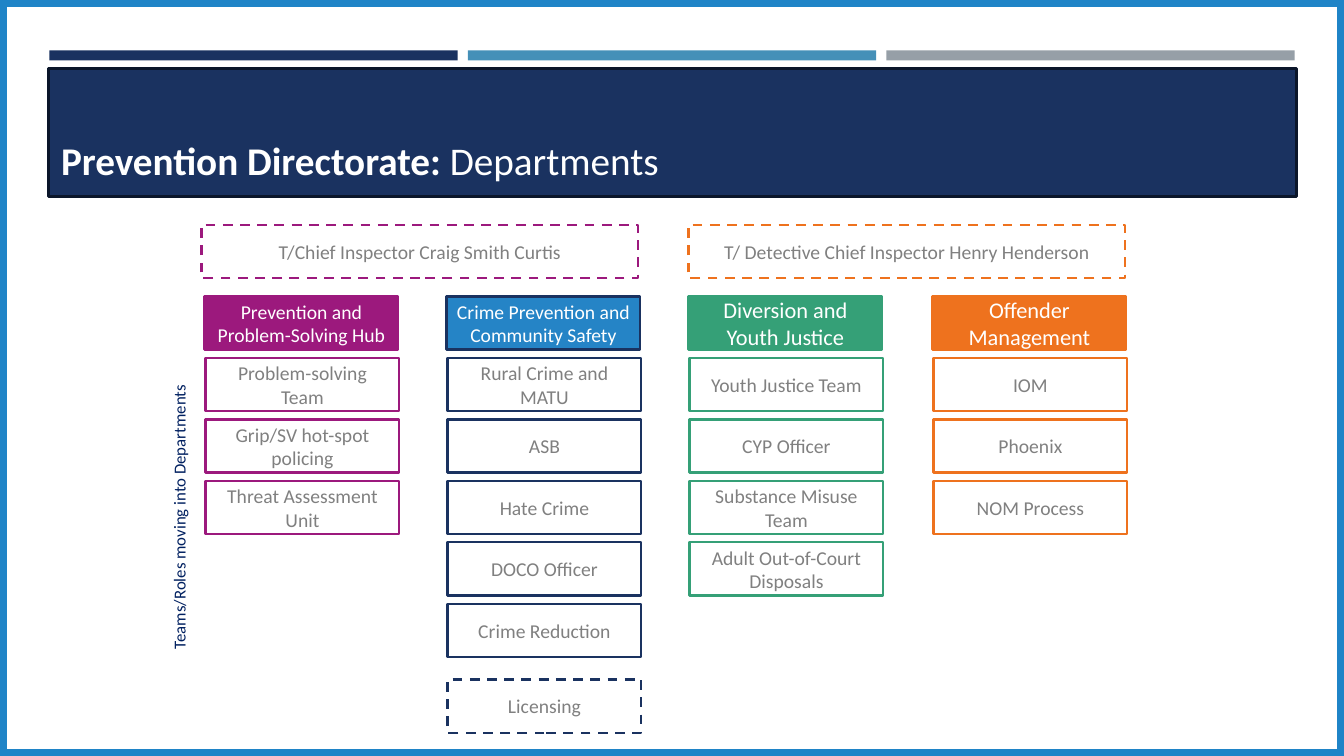
from dataclasses import dataclass

from pptx import Presentation
from pptx.dml.color import RGBColor
from pptx.enum.dml import MSO_LINE
from pptx.enum.shapes import MSO_SHAPE
from pptx.enum.text import MSO_ANCHOR, MSO_AUTO_SIZE, PP_ALIGN
from pptx.shapes.autoshape import Shape
from pptx.slide import Slide
from pptx.text.text import _Paragraph
from pptx.util import Emu, Pt

EMU_PER_PX = 9144
SLIDE_WIDTH, SLIDE_HEIGHT = 1333, 750
FONT = "Calibri"
COLOURS = {
    "white": "FFFFFF",
    "navy": "1A3260",
    "dark navy": "0B162A",
    "label navy": "002060",
    "steel": "4590B8",
    "silver": "969FA7",
    "grey": "808080",
    "purple": "9C197D",
    "blue": "2584C6",
    "green": "35A077",
    "orange": "EE721E",
    "frame blue": "1F84C7",
}

BOX_WIDTH, BOX_HEIGHT = 192, 53
LEADER_TOP, LEADER_WIDTH = 223, 433
HEADING_TOP, ROW_PITCH = 294, 61
TEAM_INDENT = 1
LICENSING_TOP = 674
BAR_LEFT, BAR_TOP, BAR_WIDTH, BAR_HEIGHT, BAR_PITCH = 49, 50, 405, 10, 415


@dataclass(frozen=True)
class Area:
    left: int
    top: int
    width: int
    height: int

    def emu(self) -> tuple[Emu, Emu, Emu, Emu]:
        return (px(self.left), px(self.top), px(self.width), px(self.height))


@dataclass(frozen=True)
class Leader:
    name: str
    left: int
    colour: str


@dataclass(frozen=True)
class Department:
    heading: str
    left: int
    fill: str
    outline: str
    heading_size: int
    teams: tuple[str, ...]


LEADERS = (
    Leader("T/Chief Inspector Craig Smith Curtis", 200, "purple"),
    Leader("T/ Detective Chief Inspector Henry Henderson", 683, "orange"),
)

CRIME_PREVENTION = Department(
    "Crime Prevention and Community Safety", 443, "blue", "navy", 14,
    ("Rural Crime and MATU", "ASB", "Hate Crime", "DOCO Officer", "Crime Reduction"),
)

DEPARTMENTS = (
    Department(
        "Prevention and Problem-Solving Hub", 203, "purple", "purple", 14,
        ("Problem-solving Team", "Grip/SV hot-spot policing", "Threat Assessment Unit"),
    ),
    CRIME_PREVENTION,
    Department(
        "Diversion and Youth Justice", 683, "green", "green", 16,
        ("Youth Justice Team", "CYP Officer", "Substance Misuse Team",
         "Adult Out-of-Court Disposals"),
    ),
    Department(
        "Offender Management", 925, "orange", "orange", 16,
        ("IOM", "Phoenix", "NOM Process"),
    ),
)


def px(length: int) -> Emu:
    return Emu(length * EMU_PER_PX)


def rgb(colour: str) -> RGBColor:
    return RGBColor.from_string(COLOURS[colour])


def style_paragraph(paragraph: _Paragraph, size: int, colour: str) -> None:
    paragraph.alignment = PP_ALIGN.CENTER
    paragraph.font.name = FONT
    paragraph.font.size = Pt(size)
    paragraph.font.color.rgb = rgb(colour)


def add_rectangle(slide: Slide, area: Area, fill: str | None, outline: str | None = None,
                  weight: float = 1.75, dashed: bool = False) -> Shape:
    rectangle = slide.shapes.add_shape(MSO_SHAPE.RECTANGLE, *area.emu())
    rectangle.shadow.inherit = False
    if fill:
        rectangle.fill.solid()
        rectangle.fill.fore_color.rgb = rgb(fill)
    else:
        rectangle.fill.background()
    if outline:
        rectangle.line.color.rgb = rgb(outline)
        rectangle.line.width = Pt(weight)
        if dashed:
            rectangle.line.dash_style = MSO_LINE.DASH
    else:
        rectangle.line.fill.background()
    return rectangle


def add_box(slide: Slide, text: str, area: Area, outline: str, fill: str = "white",
            colour: str = "grey", size: int = 14, dashed: bool = False) -> None:
    frame = add_rectangle(slide, area, fill, outline, dashed=dashed).text_frame
    frame.word_wrap = True
    frame.vertical_anchor = MSO_ANCHOR.MIDDLE
    frame.text = text
    style_paragraph(frame.paragraphs[0], size, colour)


def add_label(slide: Slide, area: Area, size: int, colour: str) -> tuple[Shape, _Paragraph]:
    label = slide.shapes.add_textbox(*area.emu())
    label.text_frame.word_wrap = True
    label.text_frame.auto_size = MSO_AUTO_SIZE.SHAPE_TO_FIT_TEXT
    paragraph = label.text_frame.paragraphs[0]
    style_paragraph(paragraph, size, colour)
    return label, paragraph


def add_banner(slide: Slide) -> None:
    for index, colour in enumerate(("navy", "steel", "silver")):
        left = BAR_LEFT + index * BAR_PITCH
        add_rectangle(slide, Area(left, BAR_TOP, BAR_WIDTH, BAR_HEIGHT), colour)
    add_rectangle(slide, Area(48, 68, 1238, 127), "navy", "dark navy")
    _, title = add_label(slide, Area(-135, 130, 984, 57), 28, "white")
    for text, bold in (("Prevention Directorate: ", True), ("Departments", False)):
        run = title.add_run()
        run.text = text
        run.font.bold = bold


def add_department(slide: Slide, department: Department) -> None:
    add_box(slide, department.heading,
            Area(department.left, HEADING_TOP, BOX_WIDTH, BOX_HEIGHT),
            department.outline, department.fill, "white", department.heading_size)
    for row, team in enumerate(department.teams, start=1):
        area = Area(department.left + TEAM_INDENT, HEADING_TOP + row * ROW_PITCH,
                    BOX_WIDTH, BOX_HEIGHT)
        add_box(slide, team, area, department.outline)


def main() -> None:
    presentation = Presentation()
    presentation.slide_width = px(SLIDE_WIDTH)
    presentation.slide_height = px(SLIDE_HEIGHT)
    slide = presentation.slides.add_slide(presentation.slide_layouts[6])

    add_banner(slide)
    for department in DEPARTMENTS:
        add_department(slide, department)

    side_label, side_text = add_label(slide, Area(12, 498, 331, 30), 12, "label navy")
    side_label.rotation = 270
    side_text.add_run().text = "Teams/Roles moving into Departments"

    licensing = Area(CRIME_PREVENTION.left + TEAM_INDENT, LICENSING_TOP, BOX_WIDTH, BOX_HEIGHT)
    add_box(slide, "Licensing", licensing, CRIME_PREVENTION.outline, dashed=True)
    for leader in LEADERS:
        area = Area(leader.left, LEADER_TOP, LEADER_WIDTH, BOX_HEIGHT)
        add_box(slide, leader.name, area, leader.colour, dashed=True)

    add_rectangle(slide, Area(0, 0, SLIDE_WIDTH, SLIDE_HEIGHT), None, "frame blue", 10)
    presentation.save("out.pptx")


if __name__ == "__main__":
    main()
